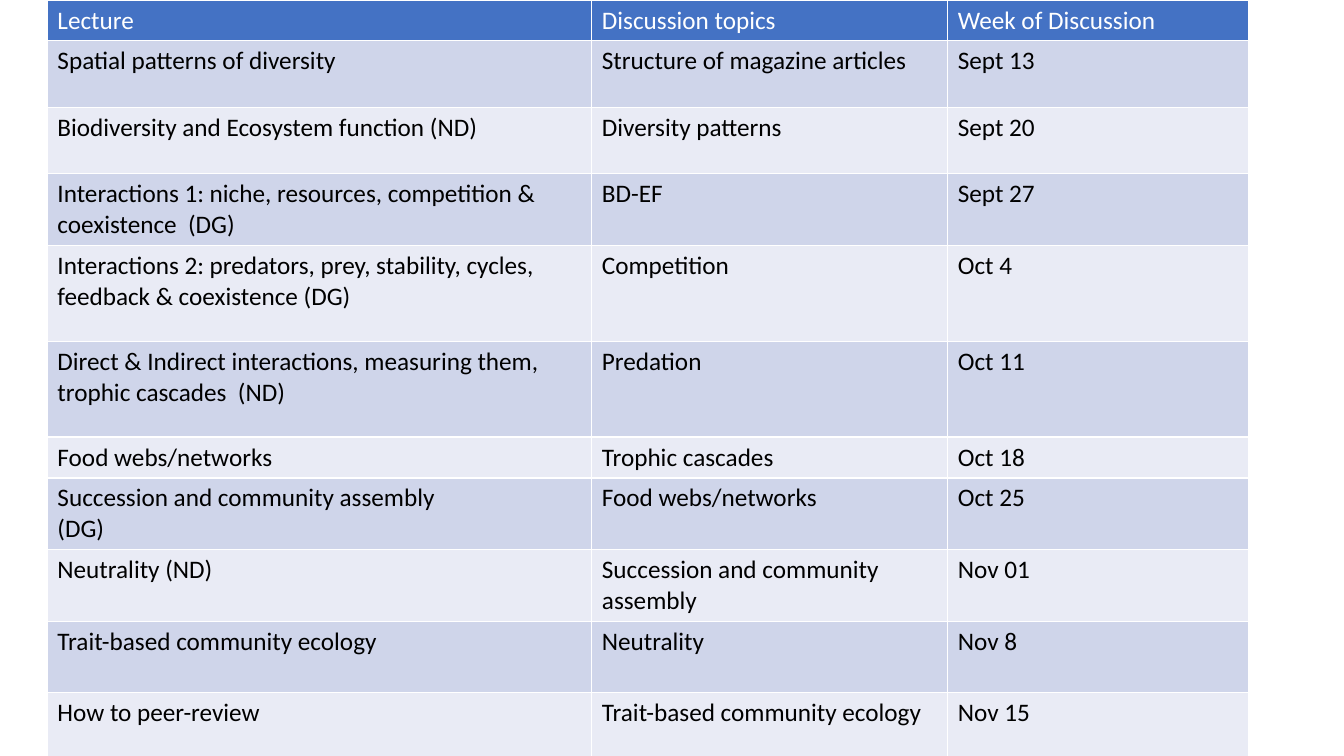
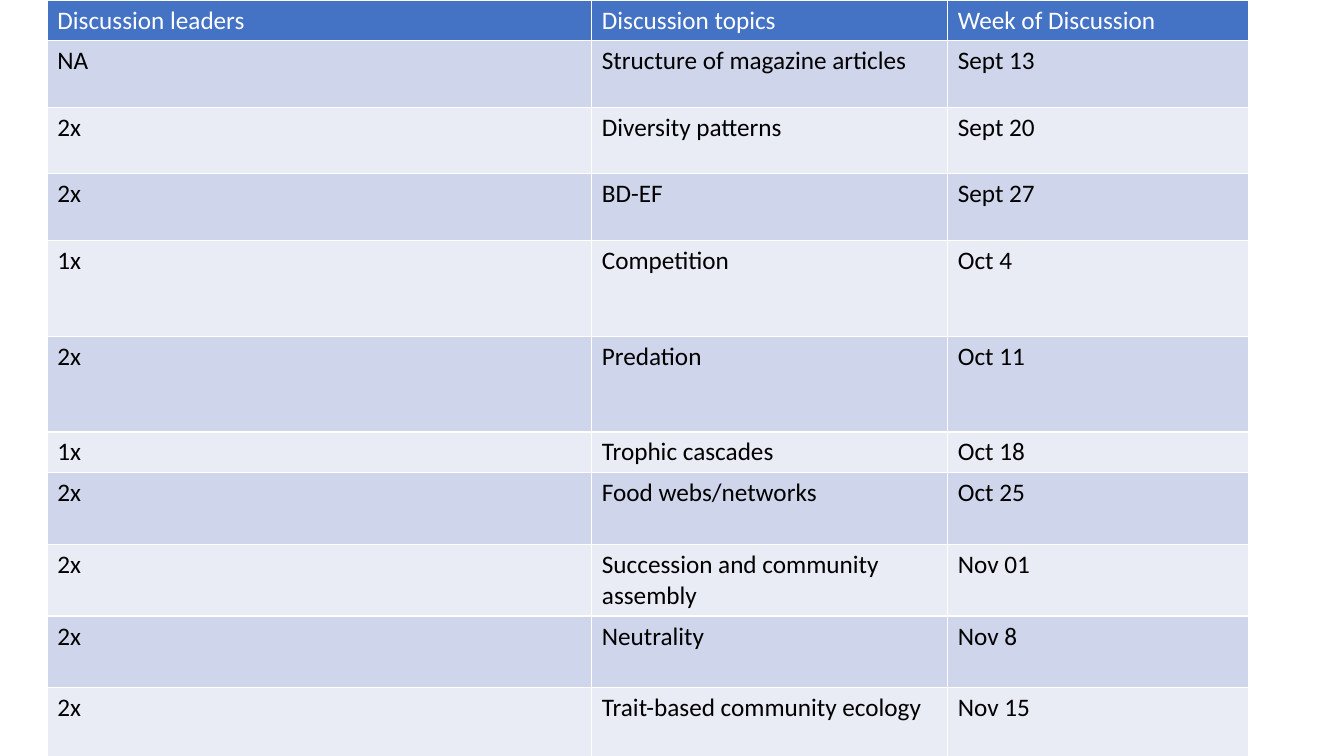
from dataclasses import dataclass

from pptx import Presentation, util as u
from pptx.dml.color import RGBColor

PX = 9144
FONT = "Calibri"
SIZE = u.Pt(18)
WHITE, BLACK = "FFFFFF", "000000"
HEAD = "4472C4"
BANDS = ("E9EBF5", "CFD5EA")
LEFT, TOP = 47, 0
COLS = (540, 353, 298)
HEAD_HIGH = 40


@dataclass(frozen=True)
class Week:
    topic: str
    date: str
    high: int


@dataclass(frozen=True)
class Sheet:
    title: str
    leads: tuple[str, ...]


WEEKS = (
    Week("Structure of magazine articles", "Sept 13", 66),
    Week("Diversity patterns", "Sept 20", 66),
    Week("BD-EF", "Sept 27", 66),
    Week("Competition", "Oct 4", 95),
    Week("Predation", "Oct 11", 95),
    Week("Trophic cascades", "Oct 18", 40),
    Week("Food webs/networks", "Oct 25", 71),
    Week("Succession and community assembly", "Nov 01", 71),
    Week("Neutrality", "Nov 8", 71),
    Week("Trait-based community ecology", "Nov 15", 71),
)

SHEETS = (
    Sheet("Lecture", (
        "Spatial patterns of diversity",
        "Biodiversity and Ecosystem function (ND)",
        "Interactions 1: niche, resources, competition & coexistence  (DG)",
        "Interactions 2: predators, prey, stability, cycles, feedback & coexistence (DG)",
        "Direct & Indirect interactions, measuring them, trophic cascades  (ND)",
        "Food webs/networks",
        "Succession and community assembly\n(DG)",
        "Neutrality (ND)",
        "Trait-based community ecology",
        "How to peer-review",
    )),
    Sheet("Discussion leaders", (
        "NA", "2x", "2x", "1x", "2x", "1x", "2x", "2x", "2x", "2x",
    )),
)


def px(n: int) -> u.Emu:
    return u.Emu(n * PX)


def color(code: str) -> RGBColor:
    return RGBColor.from_string(code)


def fill_cell(cell, words: str, back: str, ink: str) -> None:
    cell.fill.solid()
    cell.fill.fore_color.rgb = color(back)
    cell.text = words
    for para in cell.text_frame.paragraphs:
        font = para.font
        font.name, font.size, font.bold = FONT, SIZE, False
        font.color.rgb = color(ink)


def draw_sheet(deck, sheet: Sheet) -> None:
    slide = deck.slides.add_slide(deck.slide_layouts[6])
    rows = [(sheet.title, "Discussion topics", "Week of Discussion")]
    rows += [(lead, week.topic, week.date)
             for lead, week in zip(sheet.leads, WEEKS)]
    highs = [HEAD_HIGH] + [week.high for week in WEEKS]
    table = slide.shapes.add_table(
        len(rows), len(COLS), px(LEFT), px(TOP), px(sum(COLS)), px(sum(highs))
    ).table
    for col, wide in zip(table.columns, COLS):
        col.width = px(wide)
    for i, (row, high, line) in enumerate(zip(table.rows, highs, rows)):
        row.height = px(high)
        back, ink = (BANDS[i % 2], BLACK) if i else (HEAD, WHITE)
        for cell, words in zip(row.cells, line):
            fill_cell(cell, words, back, ink)


def main() -> None:
    deck = Presentation()
    deck.slide_width, deck.slide_height = px(1333), px(750)
    for sheet in SHEETS:
        draw_sheet(deck, sheet)
    deck.save("out.pptx")


if __name__ == "__main__":
    main()
